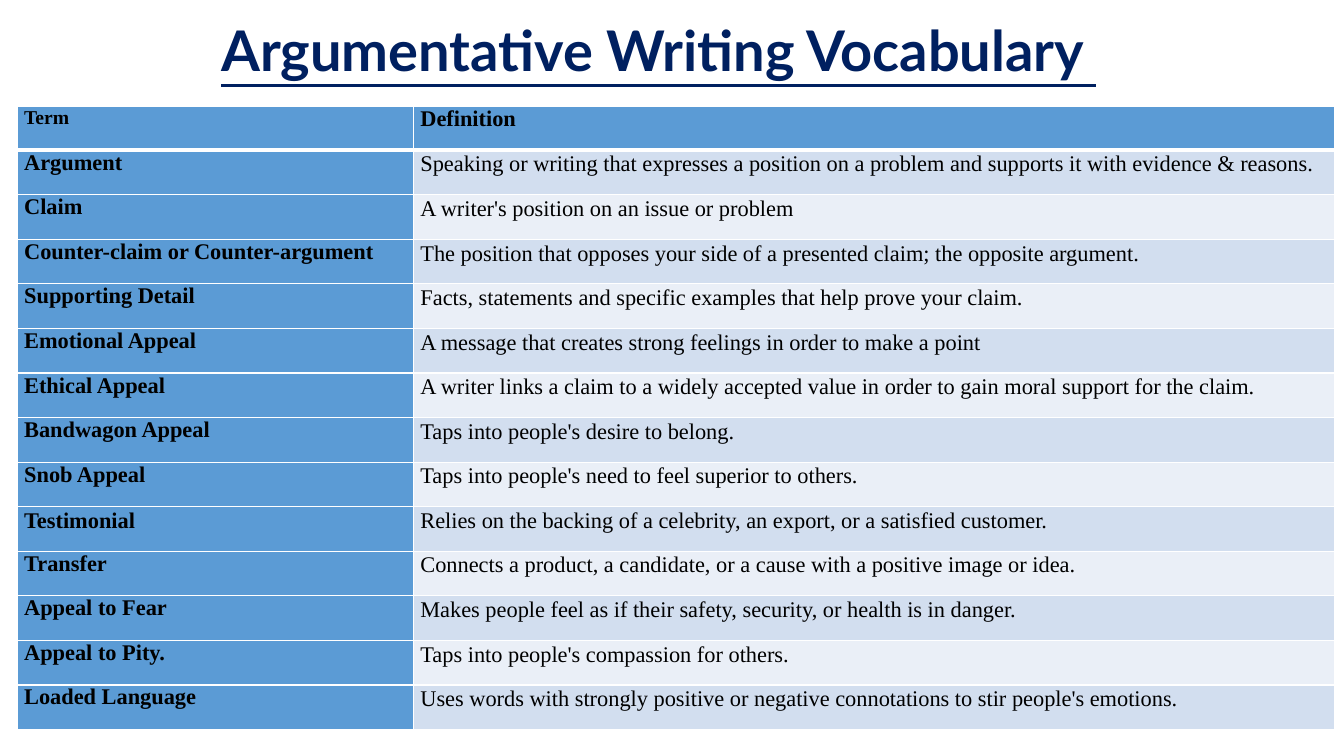
from dataclasses import dataclass

from pptx import Presentation
from pptx.dml.color import RGBColor
from pptx.enum.text import MSO_ANCHOR as Anchor, PP_ALIGN as Align
from pptx.oxml.ns import qn
from pptx.util import Inches, Pt
from lxml.etree import SubElement


@dataclass(frozen=True)
class Theme:
    title_font: str = "Lato"
    body_font: str = "Times New Roman"
    navy: str = "002060"
    black: str = "000000"
    white: str = "FFFFFF"
    blue: str = "5B9BD5"
    bands: tuple = ("D2DEEF", "EAEFF7")
    title_size: int = 40
    body_size: int = 16
    term_heading_size: int = 14


HEADINGS = ("Term", "Definition")
VOCABULARY = [
    ("Argument", "Speaking or writing that expresses a position on a problem and supports it with evidence & reasons."),
    ("Claim", "A writer's position on an issue or problem"),
    ("Counter-claim or Counter-argument", "The position that opposes your side of a presented claim; the opposite argument."),
    ("Supporting Detail", "Facts, statements and specific examples that help prove your claim."),
    ("Emotional Appeal", "A message that creates strong feelings in order to make a point"),
    ("Ethical Appeal", "A writer links a claim to a widely accepted value in order to gain moral support for the claim."),
    ("Bandwagon Appeal", "Taps into people's desire to belong."),
    ("Snob Appeal", "Taps into people's need to feel superior to others."),
    ("Testimonial", "Relies on the backing of a celebrity, an export, or a satisfied customer."),
    ("Transfer", "Connects a product, a candidate, or a cause with a positive image or idea."),
    ("Appeal to Fear", "Makes people feel as if their safety, security, or health is in danger."),
    ("Appeal to Pity.", "Taps into people's compassion for others."),
    ("Loaded Language", "Uses words with strongly positive or negative connotations to stir people's emotions."),
]
LOOSE_TERMS = {"Testimonial"}


def write(frame, text, *, font, size, color, bold=False, underline=None,
          align=None, line_spacing=None, space_after=None):
    para = frame.paragraphs[0]
    para.alignment = align
    para.line_spacing = line_spacing
    if space_after is not None:
        para.space_after = Pt(space_after)
    span = para.add_run()
    span.text = text
    span.font.name = font
    span.font.size = Pt(size)
    span.font.bold = bold
    span.font.underline = underline
    span.font.color.rgb = RGBColor.from_string(color)


def set_borders(cell, color, **widths):
    """Draw the cell's edges; widths are in points, keyed L, R, T and B."""
    properties = cell._tc.get_or_add_tcPr()
    for side, width in widths.items():
        line = SubElement(properties, qn(f"a:ln{side}"), w=str(Pt(width)))
        fill = SubElement(line, qn("a:solidFill"))
        SubElement(fill, qn("a:srgbClr"), val=color)


class VocabularySlide:
    def __init__(self, deck, theme):
        self.theme = theme
        self.page = deck.slides.add_slide(deck.slide_layouts[5])

    def title(self, text, left, top, width, height):
        box = self.page.shapes.title
        box.left, box.top = Inches(left), Inches(top)
        box.width, box.height = Inches(width), Inches(height)
        box.text_frame.vertical_anchor = Anchor.MIDDLE
        write(box.text_frame, text, font=self.theme.title_font,
              size=self.theme.title_size, color=self.theme.navy, bold=True,
              underline=True, align=Align.CENTER, line_spacing=0.9)

    def cell(self, cell, text, fill, *, top_border=1, bottom_border=1, size=None, **style):
        cell.margin_left = cell.margin_right = Inches(0.07)
        cell.margin_top = cell.margin_bottom = 0
        set_borders(cell, self.theme.white, L=1, R=1, T=top_border, B=bottom_border)
        cell.fill.solid()
        cell.fill.fore_color.rgb = RGBColor.from_string(fill)
        write(cell.text_frame, text, font=self.theme.body_font,
              size=size or self.theme.body_size, color=self.theme.black, **style)

    def table(self, headings, entries, left, top, column_widths, heading_height, height):
        theme = self.theme
        table = self.page.shapes.add_table(
            len(entries) + 1, len(headings), Inches(left), Inches(top),
            Inches(sum(column_widths)), Inches(height)).table
        for column, width in zip(table.columns, column_widths):
            column.width = Inches(width)
        for row in table.rows:
            row.height = Inches((height - heading_height) / len(entries))
        table.rows[0].height = Inches(heading_height)

        sizes = (theme.term_heading_size, theme.body_size)
        for column, (heading, size) in enumerate(zip(headings, sizes)):
            self.cell(table.cell(0, column), heading, theme.blue,
                      size=size, bold=True, bottom_border=3)

        loose = {"line_spacing": 1.07, "space_after": 8}
        for row, (term, definition) in enumerate(entries, start=1):
            top_border = 3 if row == 1 else 1
            self.cell(table.cell(row, 0), term, theme.blue, bold=True,
                      top_border=top_border, **(loose if term in LOOSE_TERMS else {}))
            self.cell(table.cell(row, 1), definition, theme.bands[(row - 1) % 2],
                      top_border=top_border, **loose)


def main():
    deck = Presentation()
    deck.slide_width, deck.slide_height = Inches(13.33), Inches(7.5)
    slide = VocabularySlide(deck, Theme())
    slide.title("Argumentative Writing Vocabulary ", 0.5, 0.12, 12.07, 0.81)
    slide.table(HEADINGS, VOCABULARY, left=0.17, top=1.06,
                column_widths=(3.93, 9.14), heading_height=0.43, height=6.18)
    deck.save("out.pptx")


if __name__ == "__main__":
    main()
